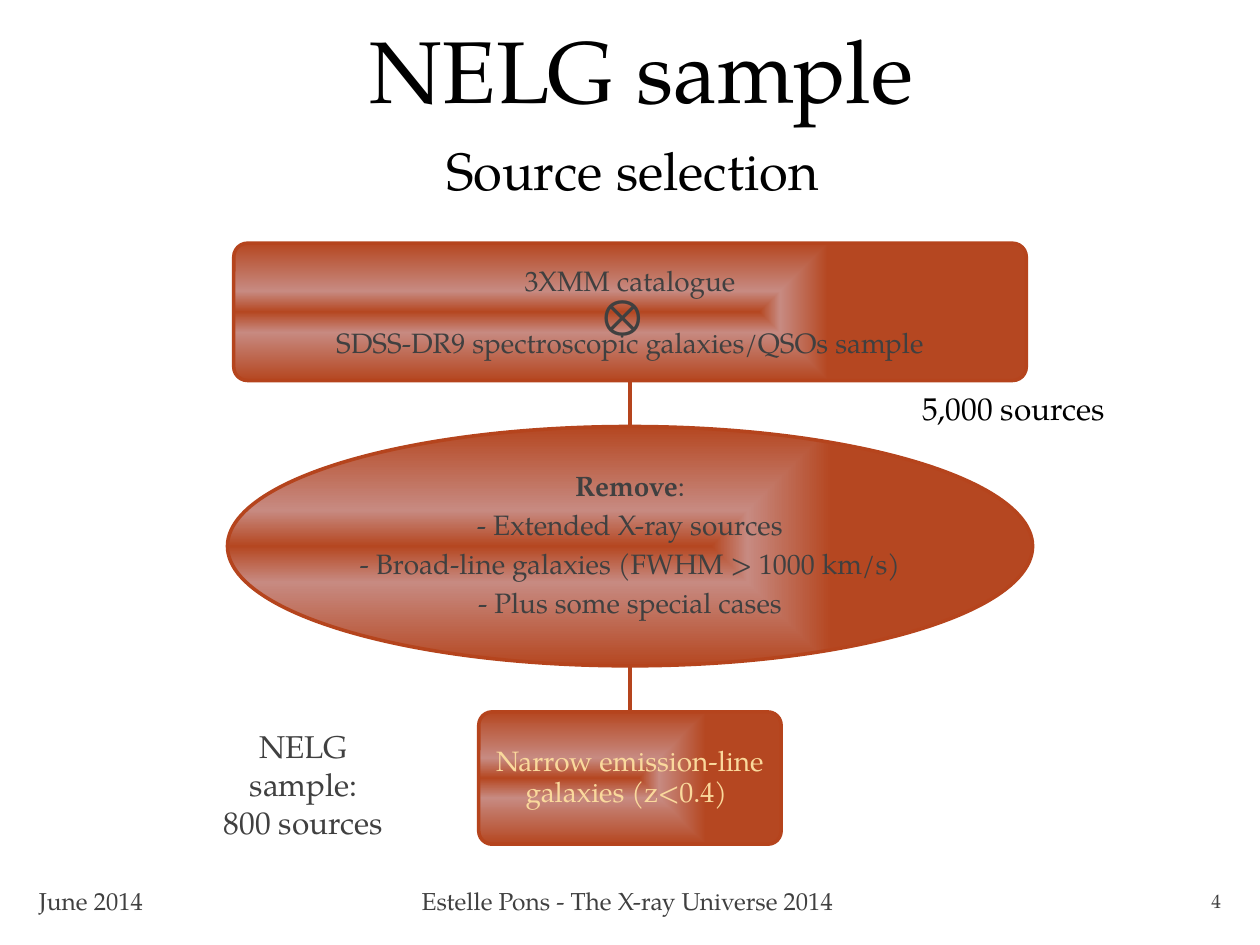
from dataclasses import dataclass

from lxml.etree import SubElement
from pptx import Presentation
from pptx.dml.color import RGBColor
from pptx.enum.shapes import MSO_CONNECTOR, MSO_SHAPE
from pptx.enum.text import MSO_ANCHOR, MSO_AUTO_SIZE, PP_ALIGN
from pptx.oxml import parse_xml
from pptx.oxml.ns import nsdecls, qn
from pptx.util import Inches, Pt


@dataclass(frozen=True)
class Theme:
    font: str = "TeX Gyre Pagella"
    black: str = "000000"
    grey: str = "404040"
    cream: str = "FAD99C"
    rust: str = "B54721"
    rose: str = "C78A81"
    edge: str = "B5441D"
    title: int = 50
    head: int = 30
    sign: int = 32
    note: int = 18
    body: int = 16
    foot: int = 14
    page: int = 11
    stroke: int = 2


THEME = Theme()
LEFT, MID, RIGHT = PP_ALIGN.LEFT, PP_ALIGN.CENTER, PP_ALIGN.RIGHT
LOOSE = {"line_spacing": 0.9, "space_after": Pt(5)}
TIGHT = {"line_spacing": 0.5}


def apply(item, form):
    for key, value in form.items():
        setattr(item, key, value)


def write(frame, paras, color, align=MID, **form):
    """Fill a frame; each paragraph is (runs, format), each run (text, size, bold)."""
    apply(frame, {"word_wrap": True, **form})
    for i, (runs, style) in enumerate(paras):
        para = frame.add_paragraph() if i else frame.paragraphs[0]
        apply(para, {"alignment": align, **style})
        for text, size, bold in runs:
            run = para.add_run()
            run.text = text
            apply(run.font, {"name": THEME.font, "size": Pt(size), "bold": bold})
            run.font.color.rgb = RGBColor.from_string(color)


def line(text, size=THEME.body, style=LOOSE):
    return [(text, size, False)], style


def label(slide, box, texts, size, color, align=MID, **form):
    frame = slide.shapes.add_textbox(*map(Inches, box)).text_frame
    write(frame, [line(text, size, {}) for text in texts], color, align, **form)


def shade(shape):
    """Give a shape the rust and rose path gradient."""
    stops = "".join(
        f'<a:gs pos="{pos}000"><a:srgbClr val="{color}"/></a:gs>'
        for pos, color in ((0, THEME.rust), (30, THEME.rose), (100, THEME.rust))
    )
    fill = parse_xml(
        f'<a:gradFill {nsdecls("a")} rotWithShape="1"><a:gsLst>{stops}</a:gsLst>'
        '<a:path path="rect"><a:fillToRect l="50000" r="100000"/></a:path></a:gradFill>'
    )
    shape._element.spPr.find(qn("a:prstGeom")).addnext(fill)


def stroke(item):
    item.line.color.rgb = RGBColor.from_string(THEME.edge)
    item.line.width = Pt(THEME.stroke)


def node(slide, kind, box, paras, color):
    shape = slide.shapes.add_shape(kind, *map(Inches, box))
    shape.shadow.inherit = False
    if kind == MSO_SHAPE.ROUNDED_RECTANGLE:
        shape.adjustments[0] = 0.1
    shade(shape)
    stroke(shape)
    pads = {f"margin_{side}": Inches(0.07) for side in ("left", "top", "right", "bottom")}
    write(shape.text_frame, paras, color, vertical_anchor=MSO_ANCHOR.MIDDLE, **pads)


def link(slide, x, top, end):
    item = slide.shapes.add_connector(MSO_CONNECTOR.STRAIGHT, *map(Inches, (x, top, x, end)))
    stroke(item)
    SubElement(item._element.spPr, qn("a:effectLst"))


def header(slide, x, y):
    label(slide, (x, y, 8.91, 0.91), [" NELG sample"], THEME.title, THEME.black,
          vertical_anchor=MSO_ANCHOR.BOTTOM)
    label(slide, (x + 1.25, y + 0.95, 6.44, 0.61), ["Source selection"],
          THEME.head, THEME.black, auto_size=MSO_AUTO_SIZE.SHAPE_TO_FIT_TEXT)


def flow(slide, mid, top, gap):
    """Stack the three steps on a centre line, joined by links."""
    merge = [
        line("3XMM catalogue"),
        line("⊗ ", THEME.sign, TIGHT),
        line("SDSS-DR9 spectroscopic galaxies/QSOs sample", style=TIGHT),
    ]
    cuts = [
        ([("Remove", THEME.body, True), (":", THEME.body, False)], LOOSE),
        line("- Extended X-ray sources"),
        line("- Broad-line galaxies (FWHM > 1000 km/s)"),
        line("- Plus some special cases"),
    ]
    left = [line("Narrow emission-line galaxies (z<0.4) ")]
    box = MSO_SHAPE.ROUNDED_RECTANGLE
    steps = (
        (box, 6.29, 1.09, merge, THEME.grey),
        (MSO_SHAPE.OVAL, 6.39, 1.9, cuts, THEME.grey),
        (box, 2.4, 1.05, left, THEME.cream),
    )
    y = top
    for i, (kind, width, height, paras, color) in enumerate(steps):
        if i:
            link(slide, mid, y, y + gap)
            y += gap
        node(slide, kind, (mid - width / 2, y, width, height), paras, color)
        y += height


def counts(slide, x, y):
    grow = {"auto_size": MSO_AUTO_SIZE.SHAPE_TO_FIT_TEXT}
    label(slide, (x + 5.71, y, 2.04, 0.4), ["5,000 sources"],
          THEME.note, THEME.black, LEFT, **grow)
    label(slide, (x, y + 2.68, 1.8, 1.01), ["NELG sample:", "800 sources"],
          THEME.note, THEME.grey, **grow)


def footer(slide, x, y):
    parts = (
        (0, 2.33, "June 2014", THEME.foot, LEFT),
        (2.51, 4.52, "Estelle Pons - The X-ray Universe 2014", THEME.foot, MID),
        (7.25, 2.33, "4", THEME.page, RIGHT),
    )
    for dx, width, text, size, align in parts:
        label(slide, (x + dx, y, width, 0.4), [text], size, THEME.grey, align,
              vertical_anchor=MSO_ANCHOR.MIDDLE)


def main():
    deck = Presentation()
    apply(deck, {"slide_width": Inches(10), "slide_height": Inches(7.5)})
    slide = deck.slides.add_slide(deck.slide_layouts[6])
    header(slide, 0.55, 0.1)
    flow(slide, 5, 1.93, 0.365)
    counts(slide, 1.51, 3.04)
    footer(slide, 0.21, 6.95)
    deck.save("out.pptx")


if __name__ == "__main__":
    main()
